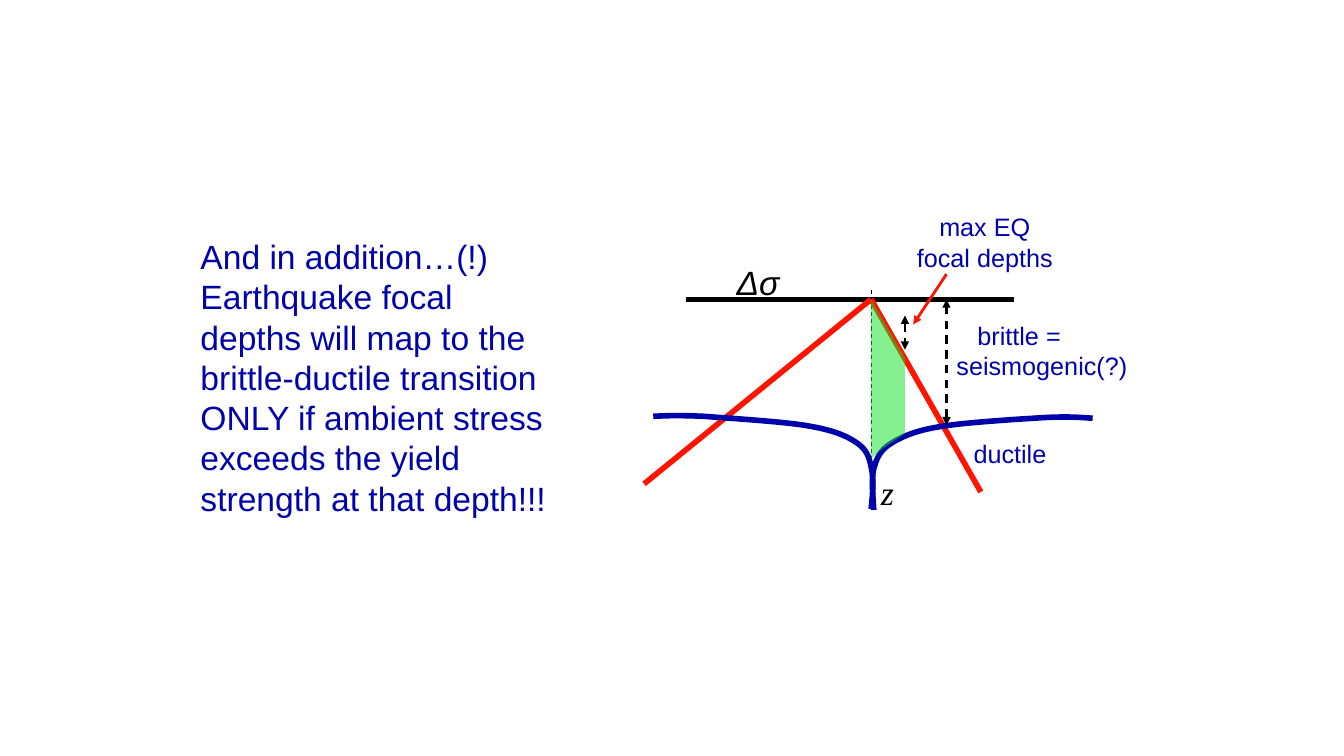
import pptx
import pptx.util
import pptx.dml.color
import pptx.enum.dml
import pptx.enum.shapes
import pptx.enum.text
import lxml.etree
from pptx.oxml.ns import qn

Pt = pptx.util.Pt
BLACK = pptx.dml.color.RGBColor(0x00, 0x00, 0x00)
RED = pptx.dml.color.RGBColor(0xFF, 0x14, 0x00)
BLUE = pptx.dml.color.RGBColor(0x00, 0x03, 0xAA)
GREEN = pptx.dml.color.RGBColor(0x0C, 0xE3, 0x21)
DASH = pptx.enum.dml.MSO_LINE.DASH
LEFT = pptx.enum.text.PP_ALIGN.LEFT
CENTER = pptx.enum.text.PP_ALIGN.CENTER

deck = pptx.Presentation()
deck.slide_width, deck.slide_height = Pt(960), Pt(540)
page = deck.slides.add_slide(deck.slide_layouts[6])


def add_line(start, end, color, width, dash=None, arrows=()):
    """Draw a straight line; arrows may hold headEnd (at start) and tailEnd (at end)."""
    line = page.shapes.add_connector(
        pptx.enum.shapes.MSO_CONNECTOR.STRAIGHT, *map(Pt, start + end))
    line.line.color.rgb = color
    line.line.width = Pt(width)
    if dash:
        line.line.dash_style = dash
    outline = line.line._get_or_add_ln()
    for arrow in arrows:
        lxml.etree.SubElement(outline, qn(f"a:{arrow}"), type="triangle")
    lxml.etree.SubElement(line._element.spPr, qn("a:effectLst"))


def add_label(place, lines, size, color=BLUE, font="Arial", italic=False, align=LEFT):
    box = page.shapes.add_textbox(*map(Pt, place))
    box.text_frame.word_wrap = False
    box.text_frame.text = "\n".join(lines)
    for para in box.text_frame.paragraphs:
        para.alignment = align
        para.line_spacing = Pt(size * 1.2)
        for span in para.runs:
            span.font.name = font
            span.font.size = Pt(size)
            span.font.italic = italic
            span.font.color.rgb = color
    return box


# Axes and brittle strength lines
origin = (622.2, 213.8)
add_line((490.3, 213.8), (724.3, 213.8), BLACK, 4)
add_line((622.2, 207.4), (622.2, 357.8), BLACK, 0.75, DASH)
add_label((519.1, 183.6, 49.7, 36), ["Δσ"], 24, BLACK, italic=True)
add_label((622.2, 333.4, 23.8, 36), ["z"], 24, BLACK, "Times New Roman", True)
add_line(origin, (700.6, 351.4), RED, 4)
add_line(origin, (460.1, 345.6), RED, 4)

# Ductile strength curves: a start point, then three Bezier points per segment
left_curve = [
    (622.2, 363.6), (623.5, 352.8), (624.2, 341.3), (622.2, 333.4),
    (620.6, 325.4), (618.5, 320.4), (610.6, 315.4), (602.6, 310.3),
    (592.6, 306.7), (574.6, 303.8), (556.6, 301), (520.6, 298.8),
    (502.6, 297.4), (484.6, 296.6), (475.2, 297), (466.6, 297.4)]
right_curve = [
    (624.2, 364.3), (623.5, 353.5), (622.4, 342.7), (624.2, 334.8),
    (626.4, 326.9), (628.6, 321.8), (636.5, 316.8), (644.4, 311.8),
    (654.5, 307.4), (672.5, 304.6), (690.5, 301.7), (726.5, 299.5),
    (744.5, 298.4), (762.5, 297.4), (771.1, 298.1), (780.5, 298.8)]
STEPS = 12
for curve in (left_curve, right_curve):
    points = []
    for first in range(0, len(curve) - 1, 3):
        corners = curve[first:first + 4]
        for step in range(1, STEPS + 1):
            t = step / STEPS
            weights = ((1 - t) ** 3, 3 * t * (1 - t) ** 2, 3 * t ** 2 * (1 - t), t ** 3)
            points.append(tuple(
                Pt(sum(w * corner[axis] for w, corner in zip(weights, corners)))
                for axis in (0, 1)))
    builder = page.shapes.build_freeform(Pt(curve[0][0]), Pt(curve[0][1]))
    builder.add_line_segments(points, close=False)
    strength = builder.convert_to_shape()
    strength.shadow.inherit = False
    strength.fill.background()
    strength.line.color.rgb = BLUE
    strength.line.width = Pt(4)

# Brittle and ductile zones
brittle = add_label((676.1, 225.4, 137.5, 51.1), ["brittle =", "seismogenic(?)"], 18)
brittle.text_frame.paragraphs[0]._p.get_or_add_pPr().set("marL", str(Pt(15)))
add_line((676.1, 303.8), (676.1, 213.8), BLACK, 1.5, DASH, ("headEnd", "tailEnd"))
add_label((688.3, 309.6, 66.2, 28.8), ["ductile"], 18)

# Ambient stress area
builder = page.shapes.build_freeform(Pt(origin[0]), Pt(origin[1]))
builder.add_line_segments([
    (Pt(x), Pt(y)) for x, y in
    [(622.2, 327.6), (628.6, 321.8), (646.4, 309.6), (646.4, 255.6)]])
ambient = builder.convert_to_shape()
ambient.shadow.inherit = False
ambient.line.fill.background()
ambient.fill.solid()
ambient.fill.fore_color.rgb = GREEN
green = ambient._element.spPr.find(qn("a:solidFill"))[0]
lxml.etree.SubElement(green, qn("a:alpha"), val="50000")

add_label((136.1, 164.9, 270, 211), [
    "And in addition…(!)", "Earthquake focal", "depths will map to the",
    "brittle-ductile transition", "ONLY if ambient stress",
    "exceeds the yield", "strength at that depth!!!"], 24)

# Maximum focal depths
add_line((646.4, 225.4), (646.4, 249.8), BLACK, 1.5, DASH, ("headEnd", "tailEnd"))
add_line((676.1, 195.8), (652.3, 231.8), RED, 2, arrows=("tailEnd",))
add_label((647.3, 147.6, 112.3, 51.1), ["max EQ", "focal depths"], 18, align=CENTER)

deck.save("out.pptx")
